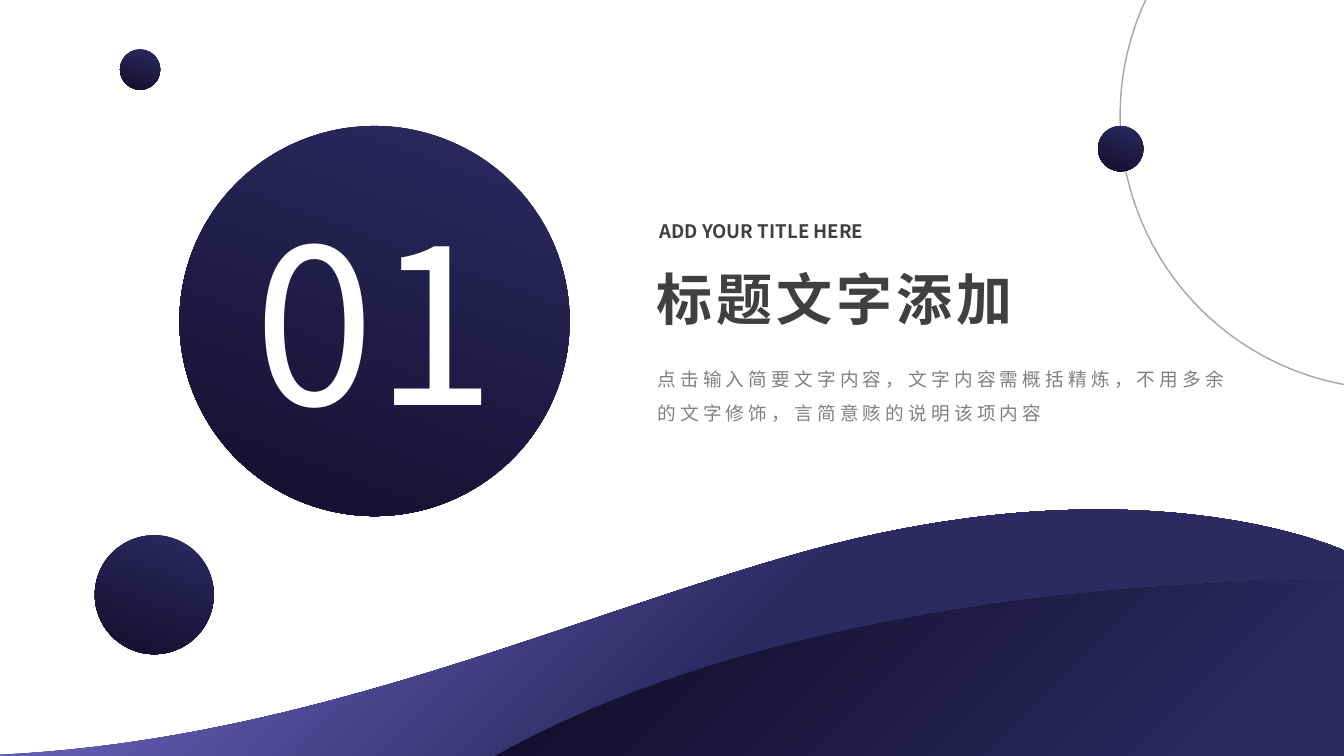
from dataclasses import dataclass

from lxml.etree import SubElement
from pptx import Presentation
from pptx.dml.color import RGBColor as RGB
from pptx.enum.shapes import MSO_SHAPE as SHAPE
from pptx.enum.text import MSO_AUTO_SIZE as AUTO, PP_ALIGN as ALIGN
from pptx.oxml.ns import qn
from pptx.util import Inches, Pt

Point = tuple[float, float]
Curve = tuple[Point, Point, Point]  # two control points and the end


@dataclass(frozen=True)
class Theme:
    font: str = "Noto Sans CJK SC"
    navy: str = "2E2961"
    midnight: str = "120F2D"
    violet: str = "6A62BD"
    heading: str = "404040"
    body: str = "808080"
    white: str = "FFFFFF"
    ring: str = "A6A6A6"
    small_size: float = 13.3
    title_size: float = 40
    number_size: float = 154.7


@dataclass(frozen=True)
class Gradient:
    start: str
    end: str
    angle: float  # counter-clockwise degrees
    start_pos: float = 0
    end_pos: float = 1


@dataclass(frozen=True)
class Disc:
    left: float
    top: float
    size: float


@dataclass(frozen=True)
class Wave:
    start: Point
    curves: list[Curve]
    corner: Point
    gradient: Gradient


T = Theme()
DISC_FILL = Gradient(T.navy, T.midnight, 250)

NUMBER_DISC = Disc(1.78, 1.25, 3.87)
SMALL_DISCS = [Disc(0.94, 5.31, 1.18), Disc(1.19, 0.49, 0.4)]
RING = Disc(11.11, -1.57, 5.43)
RING_DISC = Disc(10.89, 1.25, 0.45)

WAVES = [
    Wave((13.35, 5.47),
         [((13.35, 5.47), (11.33, 4.51), (7.85, 5.51)),
          ((5.39, 6.21), (2.66, 7.5), (-0.57, 7.5))],
         (13.35, 7.5), Gradient(T.violet, T.navy, 315, 0.18, 0.58)),
    Wave((13.35, 5.76),
         [((11.92, 5.75), (7.82, 5.88), (4.91, 7.5))],
         (13.35, 7.5), Gradient(T.midnight, T.navy, 315, 0.15, 0.91)),
]


def paint(sp, gradient: Gradient) -> None:
    """Give a shape a linear gradient and no outline."""
    sp.shadow.inherit = False
    sp.line.fill.background()
    sp.fill.gradient()
    sp.fill.gradient_angle = gradient.angle
    first, last = sp.fill.gradient_stops
    first.color.rgb = RGB.from_string(gradient.start)
    first.position = gradient.start_pos
    last.color.rgb = RGB.from_string(gradient.end)
    last.position = gradient.end_pos


def add_circle(slide, disc: Disc):
    size = Inches(disc.size)
    return slide.shapes.add_shape(
        SHAPE.OVAL, Inches(disc.left), Inches(disc.top), size, size)


def add_disc(slide, disc: Disc) -> None:
    paint(add_circle(slide, disc), DISC_FILL)


def add_ring(slide, disc: Disc) -> None:
    sp = add_circle(slide, disc)
    sp.shadow.inherit = False
    sp.fill.background()
    sp.line.color.rgb = RGB.from_string(T.ring)
    sp.line.width = Pt(1)


def add_wave(slide, wave: Wave) -> None:
    """Draw the crest as Bezier curves and close it at the corner."""
    points = [pt for curve in wave.curves for pt in curve] + [wave.corner]
    start, *rest = [(Inches(x), Inches(y)) for x, y in [wave.start, *points]]
    builder = slide.shapes.build_freeform(*start)
    builder.add_line_segments(rest, close=True)
    sp = builder.convert_to_shape()
    # Merge every three line segments of the crest into one curve
    lines = list(sp._element.iter(qn("a:lnTo")))
    for i in range(0, 3 * len(wave.curves), 3):
        first, *others = lines[i:i + 3]
        outline = first.getparent()
        bezier = outline.makeelement(qn("a:cubicBezTo"))
        outline.replace(first, bezier)
        for line in (first, *others):
            bezier.append(line[0])
        for line in others:
            outline.remove(line)
    paint(sp, wave.gradient)


def add_text(slide, text: str, left: float, top: float, width: float,
             height: float, *, size: float, color: str, bold: bool = False,
             spacing: float = 0, line_spacing: float = 1, wrap: bool = True,
             align: ALIGN = ALIGN.LEFT, inset: Point = (0.13, 0.07)) -> None:
    sp = slide.shapes.add_textbox(
        Inches(left), Inches(top), Inches(width), Inches(height))
    tf = sp.text_frame
    tf.word_wrap = wrap
    tf.auto_size = AUTO.SHAPE_TO_FIT_TEXT
    tf.margin_left = tf.margin_right = Inches(inset[0])
    tf.margin_top = tf.margin_bottom = Inches(inset[1])
    p = tf.paragraphs[0]
    p.alignment = align
    p.line_spacing = line_spacing
    r = p.add_run()
    r.text = text
    r.font.size = Pt(size)
    r.font.bold = bold
    r.font.color.rgb = RGB.from_string(color)
    r.font.name = T.font
    # East Asian typeface and letter spacing
    props = r.font._element
    SubElement(props, qn("a:ea")).set("typeface", T.font)
    if spacing:
        props.set("spc", str(round(spacing * 100)))


def main() -> None:
    prs = Presentation()
    prs.slide_width, prs.slide_height = Inches(13.33), Inches(7.5)
    slide = prs.slides.add_slide(prs.slide_layouts[6])

    # Section number, heading and summary
    add_disc(slide, NUMBER_DISC)
    add_text(slide, "ADD YOUR TITLE HERE", 6.41, 2.11, 2.42, 0.36,
             size=T.small_size, color=T.heading, bold=True, wrap=False)
    add_text(slide, "点击输入简要文字内容，文字内容需概括精炼，不用多余的文字修饰，"
             "言简意赅的说明该项内容", 6.39, 3.47, 6.01, 0.77,
             size=T.small_size, color=T.body, spacing=3, line_spacing=1.5)
    add_text(slide, "01", 2.38, 1.84, 2.68, 2.67, size=T.number_size,
             color=T.white, wrap=False, align=ALIGN.CENTER, inset=(0.07, 0.03))

    # Waves along the bottom
    for wave in WAVES:
        add_wave(slide, wave)

    # Title
    add_text(slide, "标题文字添加", 6.41, 2.58, 4.38, 0.77, size=T.title_size,
             color=T.heading, bold=True, spacing=3, inset=(0.1, 0.05))

    # Decorative circles
    for disc in SMALL_DISCS:
        add_disc(slide, disc)
    add_ring(slide, RING)
    add_disc(slide, RING_DISC)

    prs.save("out.pptx")


if __name__ == "__main__":
    main()
